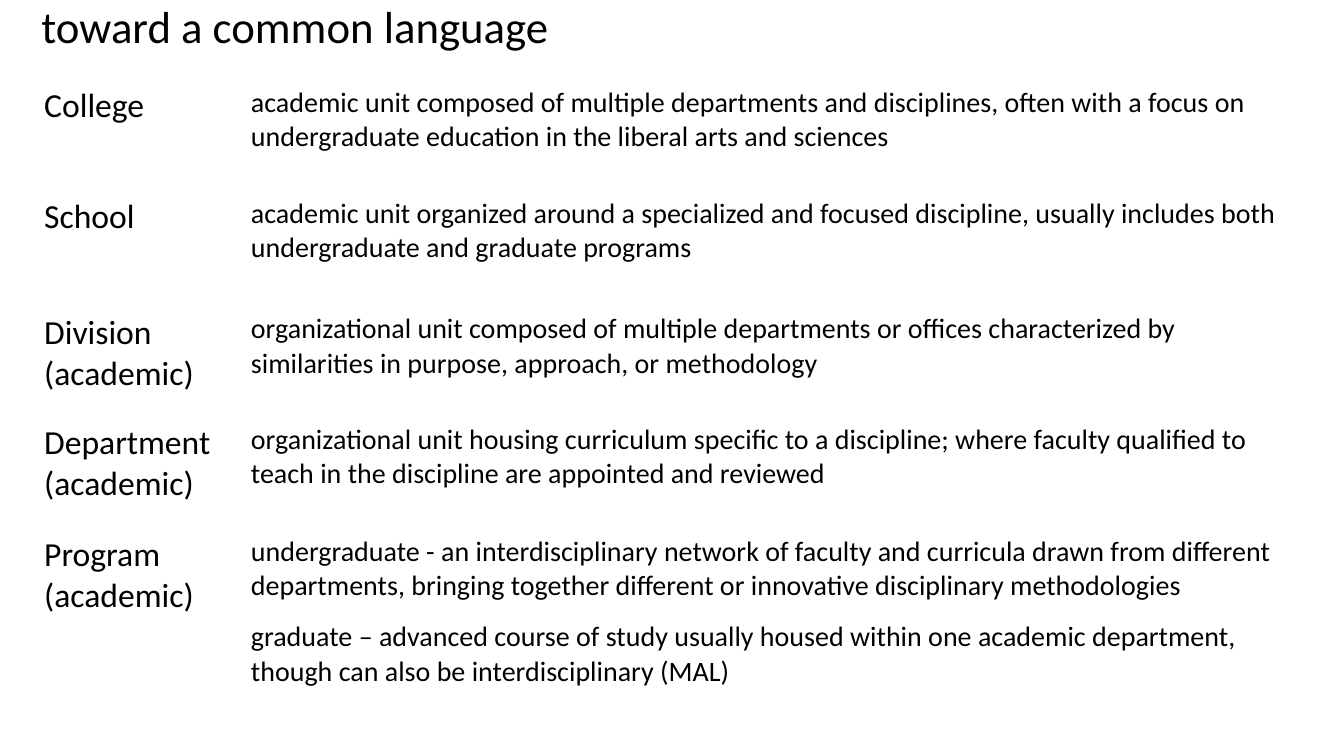
from pptx import Presentation
from pptx.dml.color import RGBColor
from pptx.enum.text import MSO_ANCHOR as Anchor, MSO_AUTO_SIZE as AutoSize, PP_ALIGN as Align
from pptx.util import Cm, Pt

BLACK = RGBColor(0x00, 0x00, 0x00)
FONT = "Calibri"
TITLE_ONLY = 5

TITLE_BOX = {"left": Cm(0.79), "top": Cm(0), "width": Cm(30.53), "height": Cm(1.6)}
TITLE_FRAME = {"word_wrap": True, "auto_size": AutoSize.NONE, "vertical_anchor": Anchor.TOP}
TITLE_PARAGRAPH = {"alignment": Align.LEFT, "line_spacing": 0.9}
DEFINITION_PARAGRAPH = {"space_before": Pt(12), "space_after": Pt(24)}
PROGRAM_PARAGRAPH = {"space_after": Pt(12)}
PLAIN_TABLE = {"first_row": False, "horz_banding": False}

COLUMN_WIDTHS = [5.21, 26.62]
TERMS = [
    (2.79, ["College"], DEFINITION_PARAGRAPH, [
        "academic unit composed of multiple departments and disciplines, often with a focus on "
        "undergraduate education in the liberal arts and sciences"]),
    (2.92, ["School"], DEFINITION_PARAGRAPH, [
        "academic unit organized around a specialized and focused discipline, usually includes both "
        "undergraduate and graduate programs"]),
    (2.79, ["Division", "(academic)"], DEFINITION_PARAGRAPH, [
        "organizational unit composed of multiple departments or offices characterized by "
        "similarities in purpose, approach, or methodology"]),
    (2.82, ["Department", "(academic)"], DEFINITION_PARAGRAPH, [
        "organizational unit housing curriculum specific to a discipline; where faculty qualified to "
        "teach in the discipline are appointed and reviewed"]),
    (4.9, ["Program", "(academic)"], PROGRAM_PARAGRAPH, [
        "undergraduate - an interdisciplinary network of faculty and curricula drawn from different "
        "departments, bringing together different or innovative disciplinary methodologies",
        "graduate – advanced course of study usually housed within one academic department, "
        "though can also be interdisciplinary (MAL)"]),
]


def apply_format(target, values):
    for name, value in values.items():
        setattr(target, name, value)


def write_paragraphs(text_frame, lines, size, paragraph_format):
    for index, line in enumerate(lines):
        paragraph = text_frame.paragraphs[0] if index == 0 else text_frame.add_paragraph()
        apply_format(paragraph, paragraph_format)
        run = paragraph.add_run()
        run.text = line
        apply_format(run.font, {"name": FONT, "size": Pt(size), "bold": False})
        run.font.color.rgb = BLACK


def add_title(slide, text):
    title = slide.shapes.title
    apply_format(title, TITLE_BOX)
    apply_format(title.text_frame, TITLE_FRAME)
    write_paragraphs(title.text_frame, [text], 32, TITLE_PARAGRAPH)


def add_glossary(slide, terms):
    width = Cm(sum(COLUMN_WIDTHS))
    height = Cm(sum(term[0] for term in terms))
    shape = slide.shapes.add_table(len(terms), len(COLUMN_WIDTHS), Cm(0.86), Cm(2.03), width, height)
    table = shape.table
    apply_format(table, PLAIN_TABLE)
    for column, column_width in zip(table.columns, COLUMN_WIDTHS):
        column.width = Cm(column_width)
    for row, (row_height, term, definition_format, definition) in zip(table.rows, terms):
        row.height = Cm(row_height)
        term_cell, definition_cell = row.cells
        write_paragraphs(term_cell.text_frame, term, 24, {})
        write_paragraphs(definition_cell.text_frame, definition, 20, definition_format)
        for cell in (term_cell, definition_cell):
            cell.fill.background()


def main():
    """Build the glossary slide of academic units and save it."""
    presentation = Presentation()
    apply_format(presentation, {"slide_width": Cm(33.87), "slide_height": Cm(19.05)})
    slide = presentation.slides.add_slide(presentation.slide_layouts[TITLE_ONLY])
    add_title(slide, "toward a common language")
    add_glossary(slide, TERMS)
    presentation.save("out.pptx")


if __name__ == "__main__":
    main()
